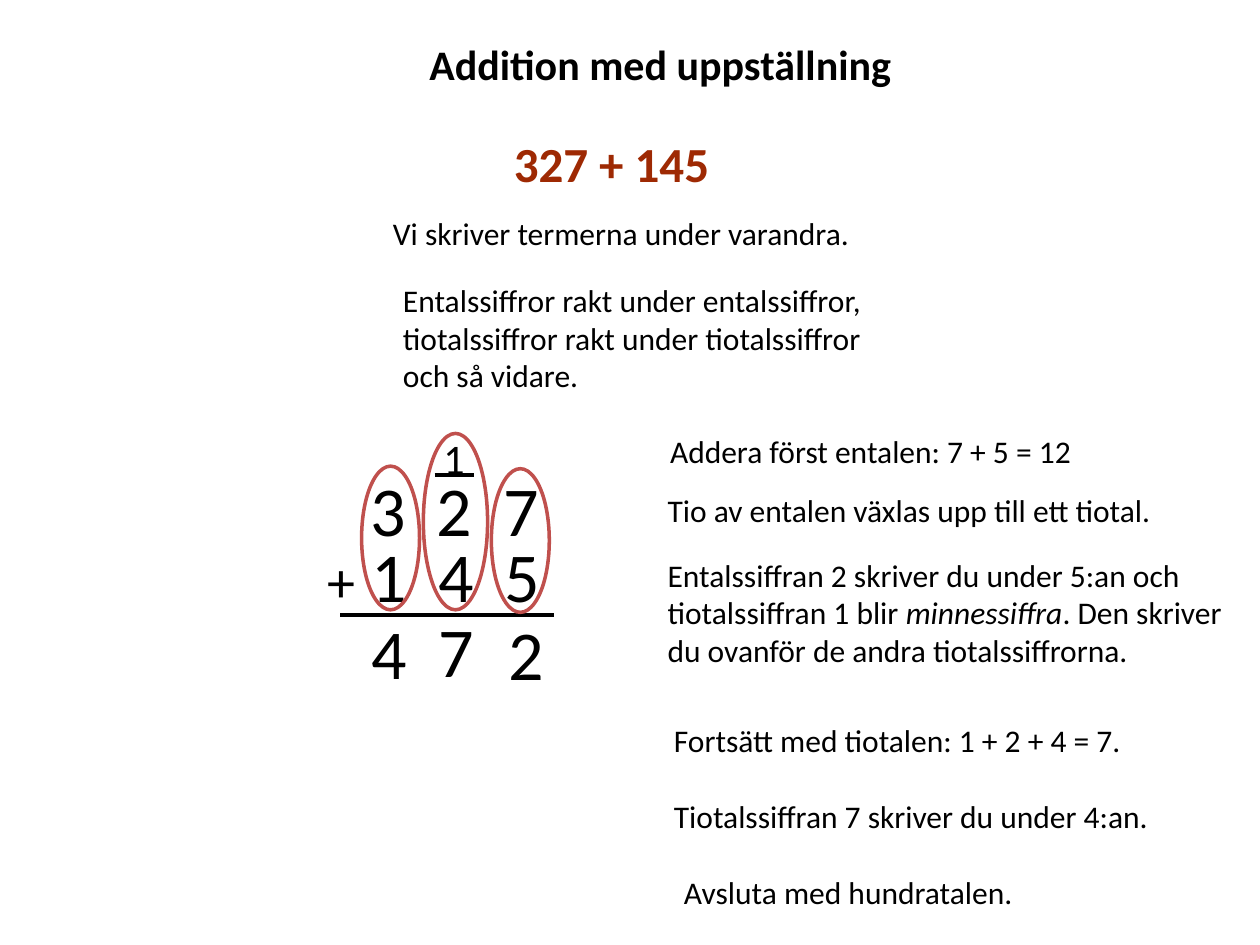
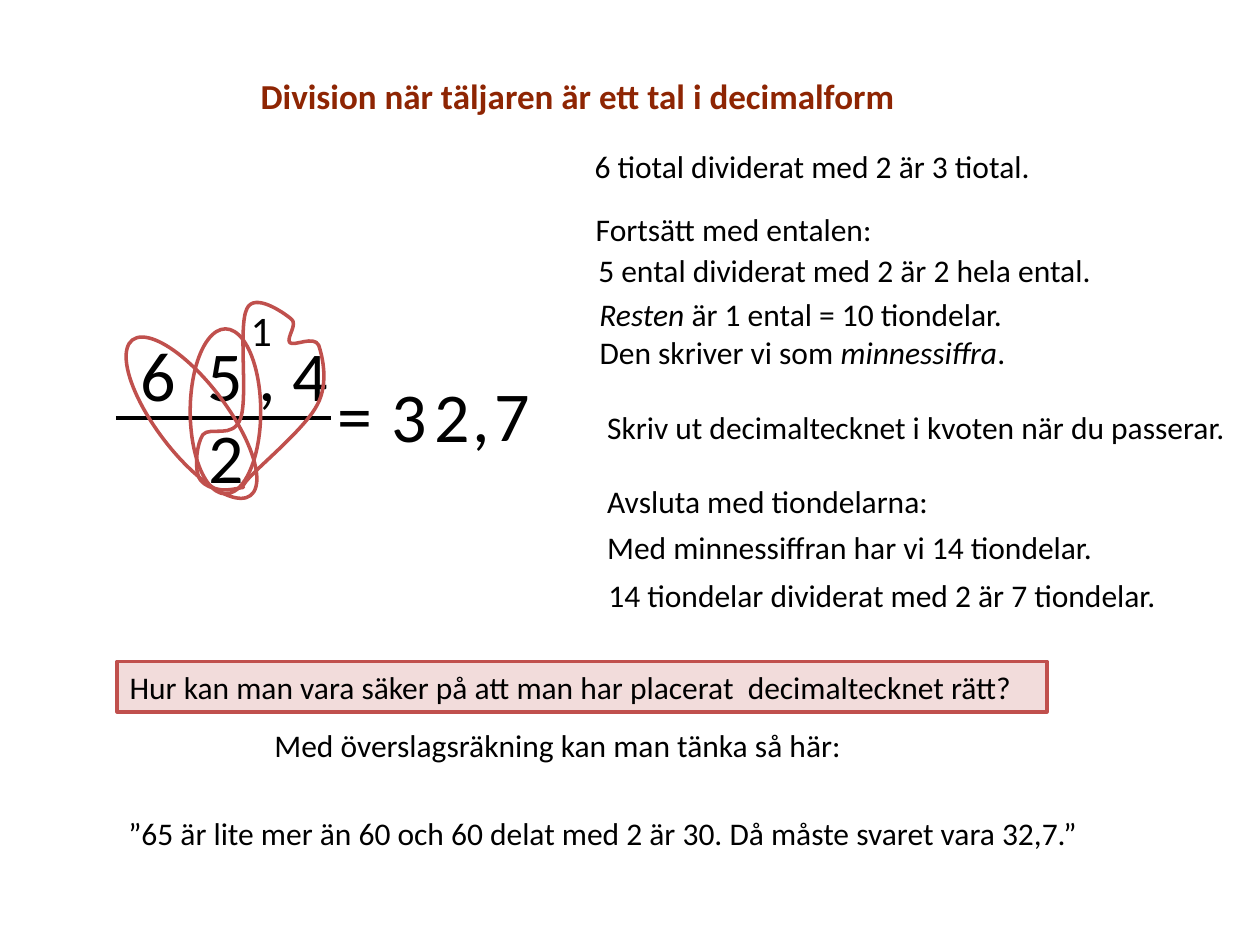
from lxml.etree import SubElement
from pptx import Presentation
from pptx.dml.color import RGBColor
from pptx.enum.shapes import MSO_CONNECTOR, MSO_SHAPE
from pptx.enum.text import MSO_ANCHOR, PP_ALIGN
from pptx.oxml.ns import qn
from pptx.util import Inches, Pt

BLACK = RGBColor(0x00, 0x00, 0x00)
RUST = RGBColor(0x9E, 0x29, 0x03)
DARK_RUST = RGBColor(0x8E, 0x25, 0x03)
RED = RGBColor(0xC0, 0x50, 0x4D)
PINK = RGBColor(0xF2, 0xDC, 0xDB)

BODY = {"name": "Calibri", "size": Pt(18), "bold": False, "color": BLACK}
DIGIT = BODY | {"size": Pt(40)}
SIGN = BODY | {"size": Pt(32)}
CARRY = BODY | {"size": Pt(24)}
HEADING = CARRY | {"bold": True}
TASK = HEADING | {"size": Pt(28), "color": RUST}
SUBHEADING = HEADING | {"size": Pt(20), "color": DARK_RUST}

DIGIT_SIZE = (0.46, 0.77)
DIGIT_PITCH = 0.53

# Texts are (words, left, top, width, height, style); *stars* mark italics.
ADDITION_TEXTS = [
    ("Addition med uppställning", 3.31, 0.26, 5.17, 0.5, HEADING),
    ("327 + 145", 3.98, 1.01, 2.24, 0.57, TASK),
    ("Vi skriver termerna under varandra.", 3.02, 1.65, 4, 0.4, BODY),
    ("Entalssiffror rakt under entalssiffror, tiotalssiffror rakt under "
     "tiotalssiffror och så vidare.", 3.1, 2.18, 4, 1.01, BODY),
    ("Addera först entalen: 7 + 5 = 12", 5.22, 3.38, 4, 0.4, BODY),
    ("Tio av entalen växlas upp till ett tiotal.", 5.2, 3.85, 4.48, 0.4, BODY),
    ("Entalssiffran 2 skriver du under 5:an och tiotalssiffran 1 blir "
     "*minnessiffra*. Den skriver du ovanför de andra tiotalssiffrorna.",
     5.2, 4.36, 4.78, 1.01, BODY),
    ("Fortsätt med tiotalen: 1 + 2 + 4 = 7.", 5.25, 5.67, 4.48, 0.4, BODY),
    ("Tiotalssiffran 7 skriver du under 4:an.", 5.25, 6.28, 4.48, 0.4, BODY),
    ("Avsluta med hundratalen.", 5.33, 6.88, 4.48, 0.4, BODY),
    ("1", 3.42, 3.38, 0.46, 0.5, CARRY),
]
# Number rows are (sign, columns, left, top, width, start of first column).
ADDITION_ROWS = [
    ("", ["3", "2", "7"], 2.84, 3.65, 2.24, 0),
    ("+", [" 1", "4", "5"], 2.5, 4.18, 2.74, 0.35),
]
ADDITION_DIGITS = [("4", 2.85, 4.79), ("7", 3.38, 4.77), ("2", 3.94, 4.8)]
# Rules are (left, right, height on the slide).
ADDITION_RULES = [(2.7, 4.4, 4.88), (3.45, 3.76, 3.77)]
# Rings are (left, top, width, height, rotation).
ADDITION_RINGS = [
    (2.87, 3.7, 0.46, 1.14, 0),
    (3.36, 3.44, 0.51, 1.4, 0),
    (3.9, 3.72, 0.46, 1.14, 0),
]

DIVISION_TEXTS = [
    ("Division när täljaren är ett tal i decimalform",
     1.97, 0.54, 7.14, 0.44, SUBHEADING),
    ("6 tiotal dividerat med 2 är 3 tiotal.", 4.62, 1.12, 5.31, 0.4, BODY),
    ("Fortsätt med entalen:", 4.63, 1.62, 3.66, 0.4, BODY),
    ("5 ental dividerat med 2 är 2 hela ental.", 4.65, 1.94, 5.67, 0.4, BODY),
    ("*Resten* är 1 ental = 10 tiondelar.", 4.66, 2.29, 3.66, 0.4, BODY),
    ("Den skriver vi som *minnessiffra*.", 4.66, 2.59, 4.31, 0.4, BODY),
    ("Skriv ut decimaltecknet i kvoten när du passerar.",
     4.72, 3.19, 5.32, 0.4, BODY),
    ("Avsluta med tiondelarna:", 4.72, 3.78, 4.41, 0.4, BODY),
    ("Med minnessiffran har vi 14 tiondelar.", 4.72, 4.14, 4.65, 0.4, BODY),
    ("14 tiondelar dividerat med 2 är 7 tiondelar.",
     4.73, 4.52, 5.09, 0.4, BODY),
    ("Med överslagsräkning kan man tänka så här:",
     2.08, 5.71, 4.84, 0.4, BODY),
    ("”65 är lite mer än 60 och 60 delat med 2 är 30. "
     "Då måste svaret vara 32,7.”", 0.92, 6.41, 8.62, 0.4, BODY),
    ("1", 1.89, 2.37, 0.55, 0.5, CARRY),
]
DIVISION_ROWS = [("", ["6", "5 , 4"], 1.02, 2.58, 2.24, 0)]
DIVISION_DIGITS = [
    ("2", 1.56, 3.23), ("=", 2.58, 2.9), ("3", 3.01, 2.91),
    ("2", 3.35, 2.91), (",", 3.65, 2.91), ("7", 3.83, 2.9),
]
DIVISION_RULES = [(0.92, 2.63, 3.32)]
DIVISION_RINGS = [(1.24, 2.54, 0.56, 1.55, 322.8), (1.51, 2.61, 0.56, 1.31, 0)]
QUESTION = ("Hur kan man vara säker på att man har placerat  "
            "decimaltecknet rätt?")
QUESTION_PLACE = (0.93, 5.25, 7.38, 0.4)
# The loop around 1, 4 and 2: two control points and an end for each curve.
LOOP_START = (1.72, 3.88)
LOOP_CURVES = [
    ((1.66, 3.87), (1.58, 3.83), (1.57, 3.76)),
    ((1.55, 3.69), (1.56, 3.53), (1.61, 3.45)),
    ((1.67, 3.38), (1.85, 3.49), (1.91, 3.32)),
    ((1.97, 3.15), (1.89, 2.59), (1.96, 2.45)),
    ((2.02, 2.32), (2.25, 2.48), (2.31, 2.53)),
    ((2.37, 2.57), (2.27, 2.68), (2.3, 2.72)),
    ((2.34, 2.75), (2.49, 2.66), (2.53, 2.74)),
    ((2.56, 2.83), (2.61, 3.04), (2.52, 3.21)),
    ((2.43, 3.39), (2.08, 3.68), (1.98, 3.79)),
    ((1.88, 3.9), (1.96, 3.86), (1.92, 3.87)),
    ((1.87, 3.88), (1.78, 3.9), (1.72, 3.88)),
]


def write(shape, words, style):
    """Add the words to the first paragraph of the shape."""
    frame = shape.text_frame
    frame.word_wrap = True
    frame.vertical_anchor = MSO_ANCHOR.TOP
    para = frame.paragraphs[0]
    para.alignment = PP_ALIGN.LEFT
    for index, part in enumerate(words.split("*")):
        if not part:
            continue
        span = para.add_run()
        span.text = part
        span.font.italic = index % 2 == 1
        for key, value in style.items():
            if key == "color":
                span.font.color.rgb = value
            else:
                setattr(span.font, key, value)
    return para


def add_text(page, words, left, top, width, height, style):
    box = page.shapes.add_textbox(*map(Inches, (left, top, width, height)))
    write(box, words, style)
    return box


def add_digit(page, symbol, left, top):
    add_text(page, symbol, left, top, *DIGIT_SIZE, DIGIT)


def add_number_row(page, sign, columns, left, top, width, start):
    box = add_text(page, sign, left, top, width, DIGIT_SIZE[1], SIGN)
    para = write(box, "\t".join(columns), DIGIT)
    tabs = SubElement(para._p.get_or_add_pPr(), qn("a:tabLst"))
    for column in range(1, len(columns)):
        position = Inches(start + column * DIGIT_PITCH)
        SubElement(tabs, qn("a:tab"), pos=str(position), algn="l")


def add_rule(page, left, right, top):
    rule = page.shapes.add_connector(
        MSO_CONNECTOR.STRAIGHT, *map(Inches, (left, top, right, top)))
    rule.line.color.rgb = BLACK
    rule.line.width = Pt(2.25)
    SubElement(rule._element.spPr, qn("a:effectLst"))


def outline(shape, fill=None):
    """Give the shape the red line and, if named, a fill."""
    shape.shadow.inherit = False
    shape.line.color.rgb = RED
    shape.line.width = Pt(2)
    if fill is None:
        shape.fill.background()
    else:
        shape.fill.solid()
        shape.fill.fore_color.rgb = fill


def add_ring(page, left, top, width, height, rotation):
    ring = page.shapes.add_shape(
        MSO_SHAPE.OVAL, *map(Inches, (left, top, width, height)))
    ring.rotation = rotation
    outline(ring)


def add_loop(page, start, curves):
    """Draw the control points as segments, then join each three in a curve."""
    builder = page.shapes.build_freeform(*map(Inches, start))
    builder.add_line_segments(
        [tuple(map(Inches, point)) for curve in curves for point in curve],
        close=True)
    loop = builder.convert_to_shape()
    segments = list(loop._element.iter(qn("a:lnTo")))
    for first, second, end in zip(*[iter(segments)] * 3):
        first.tag = qn("a:cubicBezTo")
        for segment in (second, end):
            first.append(segment[0])
            segment.getparent().remove(segment)
    outline(loop)


def add_page(deck, texts, rows, digits, rules, rings):
    page = deck.slides.add_slide(deck.slide_layouts[6])
    parts = [(add_text, texts), (add_number_row, rows), (add_digit, digits),
             (add_rule, rules), (add_ring, rings)]
    for add, items in parts:
        for item in items:
            add(page, *item)
    return page


def main():
    deck = Presentation()
    deck.slide_width, deck.slide_height = Inches(10), Inches(7.5)

    add_page(deck, ADDITION_TEXTS, ADDITION_ROWS, ADDITION_DIGITS,
             ADDITION_RULES, ADDITION_RINGS)

    division = add_page(deck, DIVISION_TEXTS, DIVISION_ROWS, DIVISION_DIGITS,
                        DIVISION_RULES, DIVISION_RINGS)
    add_loop(division, LOOP_START, LOOP_CURVES)
    question = division.shapes.add_shape(
        MSO_SHAPE.RECTANGLE, *map(Inches, QUESTION_PLACE))
    outline(question, PINK)
    write(question, QUESTION, BODY)

    deck.save("out.pptx")


if __name__ == "__main__":
    main()
